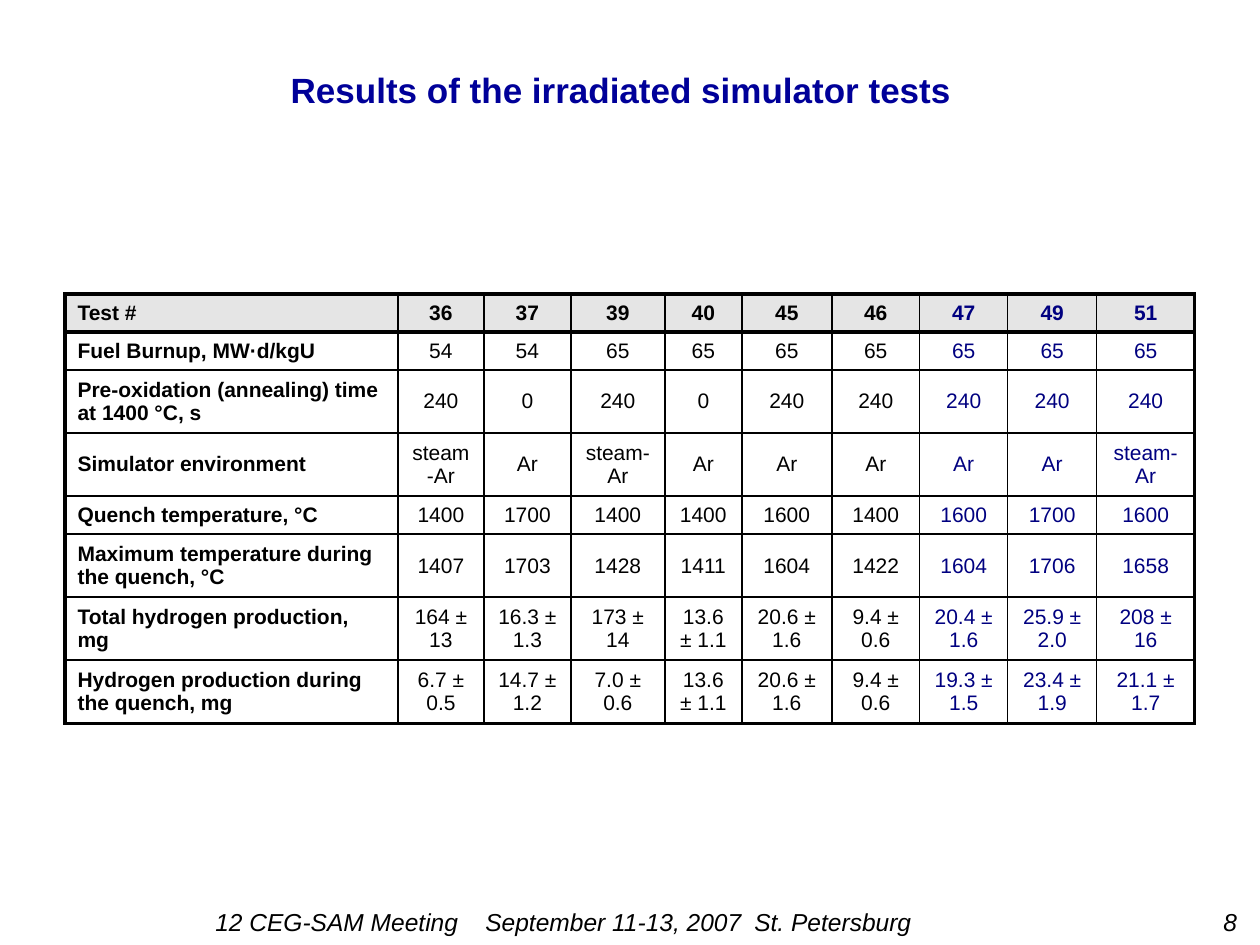
from lxml import etree
from pptx import Presentation
from pptx.dml.color import RGBColor
from pptx.enum.text import MSO_ANCHOR, PP_ALIGN
from pptx.oxml.ns import qn
from pptx.util import Pt

LEFT, CENTER = PP_ALIGN.LEFT, PP_ALIGN.CENTER
MIDDLE = MSO_ANCHOR.MIDDLE
SCALE = 914400 / 126
BLACK, NAVY, BLUE, GRAY = "000000", "000080", "000099", "E5E5E5"

WIDTHS = [333, 86, 87, 94, 77, 90, 88, 88, 89, 98]
HEIGHTS = [38, 38, 63, 63, 38, 63, 63, 63]
ROWS = [
    ["Test #", "36", "37", "39", "40", "45", "46", "47", "49", "51"],
    ["Fuel Burnup, MW·d/kgU", "54", "54", "65", "65", "65", "65", "65", "65", "65"],
    ["Pre-oxidation (annealing) time at 1400 °C, s",
     "240", "0", "240", "0", "240", "240", "240", "240", "240"],
    ["Simulator environment",
     "steam-Ar", "Ar", "steam-Ar", "Ar", "Ar", "Ar", "Ar", "Ar", "steam-Ar"],
    ["Quench temperature, °C",
     "1400", "1700", "1400", "1400", "1600", "1400", "1600", "1700", "1600"],
    ["Maximum temperature during the quench, °C",
     "1407", "1703", "1428", "1411", "1604", "1422", "1604", "1706", "1658"],
    ["Total hydrogen production, mg",
     "164 ± 13", "16.3 ± 1.3", "173 ± 14", "13.6 ± 1.1", "20.6 ± 1.6",
     "9.4 ± 0.6", "20.4 ± 1.6", "25.9 ± 2.0", "208 ± 16"],
    ["Hydrogen production during the quench, mg",
     "6.7 ± 0.5", "14.7 ± 1.2", "7.0 ± 0.6", "13.6 ± 1.1", "20.6 ± 1.6",
     "9.4 ± 0.6", "19.3 ± 1.5", "23.4 ± 1.9", "21.1 ± 1.7"],
]


def px(size):
    return round(size * SCALE)


def color(code):
    return RGBColor.from_string(code)


def write(frame, text, size=12, ink=BLACK, bold=False, italic=False,
          align=LEFT, tabs=()):
    frame.word_wrap = True
    para = frame.paragraphs[0]
    para.alignment = align
    if tabs:
        stops = etree.SubElement(para._p.get_or_add_pPr(), qn("a:tabLst"))
        for place in tabs:
            etree.SubElement(stops, qn("a:tab"), pos=str(px(place)), algn="l")
    run = para.add_run()
    run.text = text
    font = run.font
    font.name, font.size = "Arial", Pt(size)
    font.bold, font.italic = bold, italic
    font.color.rgb = color(ink)


def edge(cell, side, width):
    line = etree.SubElement(cell._tc.get_or_add_tcPr(), qn("a:ln" + side),
                            w=str(Pt(width)))
    fill = etree.SubElement(line, qn("a:solidFill"))
    etree.SubElement(fill, qn("a:srgbClr"), val=BLACK)


class Deck:
    def __init__(self):
        self.file = Presentation()
        self.file.slide_width, self.file.slide_height = px(1260), px(945)
        self.slide = self.file.slides.add_slide(self.file.slide_layouts[5])

    def title(self, text, x, y, w, h):
        shape = self.slide.shapes.title
        shape.left, shape.top, shape.width, shape.height = map(px, (x, y, w, h))
        frame = shape.text_frame
        frame.vertical_anchor = MIDDLE
        frame.margin_bottom = px(46)
        write(frame, text, size=20, ink=BLUE, bold=True, align=CENTER)

    def label(self, text, x, y, w, h, **style):
        box = self.slide.shapes.add_textbox(*map(px, (x, y, w, h)))
        write(box.text_frame, text, **style)

    def table(self, rows, x, y, widths, heights):
        frame = self.slide.shapes.add_table(
            len(rows), len(widths), px(x), px(y),
            px(sum(widths)), px(sum(heights)))
        grid = frame.table
        grid.first_row = grid.horz_banding = False
        for col, width in zip(grid.columns, widths):
            col.width = px(width)
        for row, height in zip(grid.rows, heights):
            row.height = px(height)
        for r, row in enumerate(rows):
            for c, text in enumerate(row):
                self.cell(grid.cell(r, c), text, r, c, len(rows) - 1, len(row) - 1)

    def cell(self, cell, text, r, c, last, end):
        cell.vertical_anchor = MIDDLE
        thick = {"L": c == 0, "R": c == end, "T": r < 2, "B": r in (0, last)}
        for side, heavy in thick.items():
            edge(cell, side, 2 if heavy else 1)
        if r == 0:
            cell.fill.solid()
            cell.fill.fore_color.rgb = color(GRAY)
        else:
            cell.fill.background()
        write(cell.text_frame, text, ink=NAVY if c > 6 else BLACK,
              bold=r == 0 or c == 0, align=CENTER if c else LEFT)


def main():
    deck = Deck()
    deck.title("Results of the irradiated simulator tests", 54, 55, 1134, 108)
    deck.label("12 CEG-SAM Meeting\tSeptember 11-13, 2007\tSt. Petersburg\t8",
               203, 901, 1057, 42, size=14, italic=True, tabs=(270, 539, 1008))
    deck.table(ROWS, 65, 294, WIDTHS, HEIGHTS)
    deck.file.save("out.pptx")


if __name__ == "__main__":
    main()
